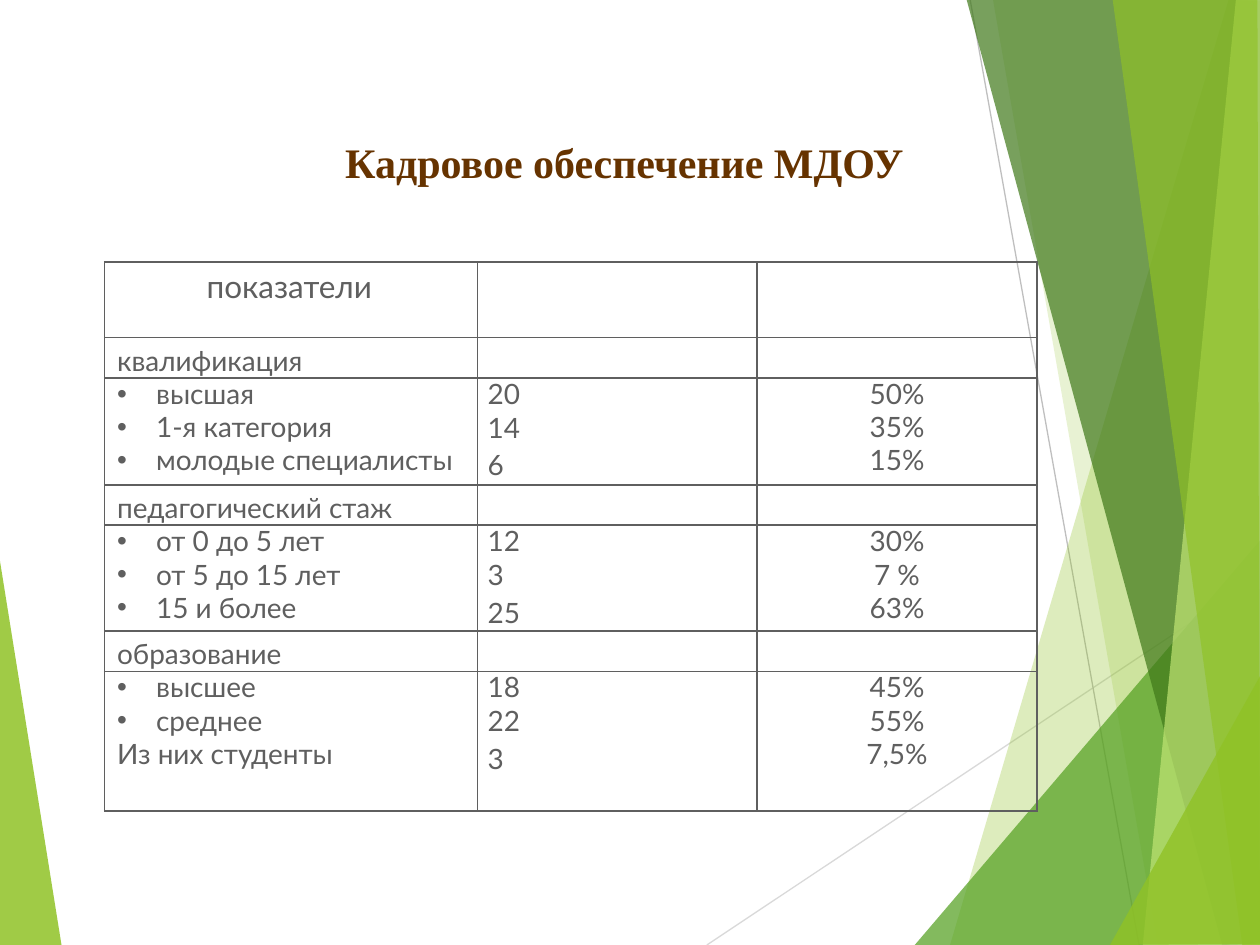
from lxml import etree
from pptx import Presentation
from pptx.dml.color import RGBColor
from pptx.enum.shapes import MSO_CONNECTOR
from pptx.enum.text import PP_ALIGN
from pptx.oxml.ns import qn
from pptx.util import Inches, Pt

STRAIGHT = MSO_CONNECTOR.STRAIGHT
LEFT, CENTER = PP_ALIGN.LEFT, PP_ALIGN.CENTER

GRAY = "5F5F5F"
TITLE = {"name": "Times New Roman", "size": Pt(24), "bold": True, "color": "663300"}
HEADER = {"name": "Lato", "size": Pt(18), "color": GRAY}
BODY = {"name": "Lato", "size": Pt(16), "color": GRAY}

# Facets: fill, opacity in percent, corner points
LEFT_FACET = ("90C226", 85, [(-0.01, 4.39), (0.49, 7.51), (-0.01, 7.5)])
RIGHT_FACETS = [
    ("90C226", 30, [(9.75, 0), (7.54, 7.5), (10.02, 7.51), (10.01, 0.01)]),
    ("90C226", 20, [(7.88, -0.01), (9.19, 7.5), (10.01, 7.5), (10.01, -0.01)]),
    ("54A021", 72, [(7.26, 7.5), (10, 4.29), (10.01, 7.5)]),
    ("3F7819", 70, [(7.67, -0.01), (9.7, 7.5), (10.01, 7.49), (10.01, -0.01)]),
    ("C0E474", 70, [(9.81, -0.01), (9.07, 7.5), (10.01, 7.5), (10, -0.01)]),
    ("90C226", 65, [(8.83, -0.01), (9.86, 7.5), (10, 7.5), (9.98, -0.01)]),
    ("90C226", 80, [(8.81, 7.5), (10.01, 5.35), (10.01, 7.49)]),
]

# Staff groups: heading, then label, count, share, bulleted, row height
GROUPS = [
    ("квалификация", [("высшая", "20", "50%", True, 0.27),
                      ("1-я категория", "14", "35%", True, 0.27),
                      ("молодые специалисты", "6", "15%", True, 0.31)]),
    ("педагогический стаж", [("от 0 до 5 лет", "12", "30%", True, 0.27),
                             ("от 5 до 15 лет", "3", "7 %", True, 0.27),
                             ("15 и более", "25", "63%", True, 0.3)]),
    ("образование", [("высшее", "18", "45%", True, 0.27),
                     ("среднее", "22", "55%", True, 0.27),
                     ("Из них студенты", "3", "7,5%", False, 0.57)]),
]
LINE_SPACING = [18.4, 18.2, 17.6]
COUNT_SPACING = [18.4, 17.9, 19]
COUNT_TOP = [0, 0.01, 0.02]


def rgb(color):
    return RGBColor.from_string(color)


class Deck:
    def __init__(self, prs):
        self.prs = prs
        self.s = prs.slides.add_slide(prs.slide_layouts[6])

    def facet(self, color, opacity, points):
        pts = [(Inches(x), Inches(y)) for x, y in points]
        fb = self.s.shapes.build_freeform(*pts[0], scale=1.0)
        fb.add_line_segments(pts[1:], close=True)
        sp = fb.convert_to_shape()
        sp.shadow.inherit = False
        sp.line.fill.background()
        sp.fill.solid()
        sp.fill.fore_color.rgb = rgb(color)
        clr = sp._element.spPr.find(qn("a:solidFill")).find(qn("a:srgbClr"))
        etree.SubElement(clr, qn("a:alpha"), val=str(opacity * 1000))

    def line(self, x1, y1, x2, y2, color):
        ln = self.s.shapes.add_connector(
            STRAIGHT, Inches(x1), Inches(y1), Inches(x2), Inches(y2))
        ln.line.color.rgb = rgb(color)
        ln.line.width = Pt(0.75)
        etree.SubElement(ln._element.spPr, qn("a:effectLst"))

    def run(self, p, text, style):
        r = p.add_run()
        r.text = text
        for key, value in style.items():
            if key == "color":
                r.font.color.rgb = rgb(value)
            else:
                setattr(r.font, key, value)

    def text(self, x, y, w, h, text, style):
        tf = self.s.shapes.add_textbox(
            Inches(x), Inches(y), Inches(w), Inches(h)).text_frame
        tf.word_wrap = True
        tf.margin_left = tf.margin_right = tf.margin_bottom = 0
        tf.margin_top = Inches(0.01)
        self.run(tf.paragraphs[0], text, style)

    def table(self, x, y, widths, heights):
        tbl = self.s.shapes.add_table(
            len(heights), len(widths), Inches(x), Inches(y),
            Inches(sum(widths)), Inches(sum(heights))).table
        tbl.first_row = tbl.horz_banding = False
        for col, w in zip(tbl.columns, widths):
            col.width = Inches(w)
        for row, h in zip(tbl.rows, heights):
            row.height = Inches(h)
        return tbl

    def cell(self, c, text, sides, style=BODY, top=0, indent=0, before=0,
             spacing=None, align=LEFT, bullet=False):
        c.margin_left = c.margin_right = c.margin_bottom = 0
        c.margin_top = Inches(top)
        p = c.text_frame.paragraphs[0]
        p.alignment = align
        p.space_before = Pt(before)
        if spacing:
            p.line_spacing = Pt(spacing)
        pPr = p._p.get_or_add_pPr()
        hang = 0.31 if bullet else 0
        pPr.set("marL", str(Inches(indent + hang)))
        pPr.set("indent", str(Inches(-hang)))
        if bullet:
            etree.SubElement(pPr, qn("a:buFont"), typeface="Arial")
            etree.SubElement(pPr, qn("a:buChar"), char="•")
        if text:
            self.run(p, text, style)
        self.borders(c, sides)
        c.fill.background()

    def borders(self, c, sides):
        tcPr = c._tc.get_or_add_tcPr()
        for side in "LRTB":
            ln = etree.SubElement(tcPr, qn("a:ln" + side), w=str(Pt(1)))
            if side in sides:
                fill = etree.SubElement(ln, qn("a:solidFill"))
                etree.SubElement(fill, qn("a:srgbClr"), val=GRAY)
            else:
                etree.SubElement(ln, qn("a:noFill"))


def main():
    prs = Presentation()
    prs.slide_width, prs.slide_height = Inches(10), Inches(7.5)
    deck = Deck(prs)

    # Background facets and thin lines
    deck.facet(*LEFT_FACET)
    deck.line(5.61, 7.5, 10.01, 4.57, "D9D9D9")
    deck.line(7.7, 0, 9.04, 7.5, "BFBFBF")
    for facet in RIGHT_FACETS:
        deck.facet(*facet)

    # Title
    deck.text(2.74, 1.07, 4.46, 0.43, "Кадровое обеспечение МДОУ", TITLE)

    # Table header
    heights = [0.6]
    for _, rows in GROUPS:
        heights += [0.32] + [row[-1] for row in rows]
    tbl = deck.table(0.83, 2.08, [2.96, 2.22, 2.22], heights)
    deck.cell(tbl.cell(0, 0), "показатели", "LRTB", HEADER,
              top=0.04, indent=0.81, before=3)
    for col in (1, 2):
        deck.cell(tbl.cell(0, col), "", "LRTB")

    # Staff groups
    i = 1
    for heading, rows in GROUPS:
        deck.cell(tbl.cell(i, 0), heading, "LRTB", top=0.05, indent=0.1,
                  before=3.2, spacing=18.9)
        for col in (1, 2):
            deck.cell(tbl.cell(i, col), "", "LRTB", spacing=18.9)
        for n, (label, count, share, bullet, _) in enumerate(rows):
            i += 1
            sides = ["LRT", "LR", "LRB"][n]
            deck.cell(tbl.cell(i, 0), label, sides, indent=0.1,
                      spacing=LINE_SPACING[n], bullet=bullet)
            deck.cell(tbl.cell(i, 1), count, sides, top=COUNT_TOP[n],
                      indent=0.08, before=0.8 * n, spacing=COUNT_SPACING[n])
            deck.cell(tbl.cell(i, 2), share, sides,
                      spacing=LINE_SPACING[n], align=CENTER)
        i += 1

    prs.save("out.pptx")


if __name__ == "__main__":
    main()
